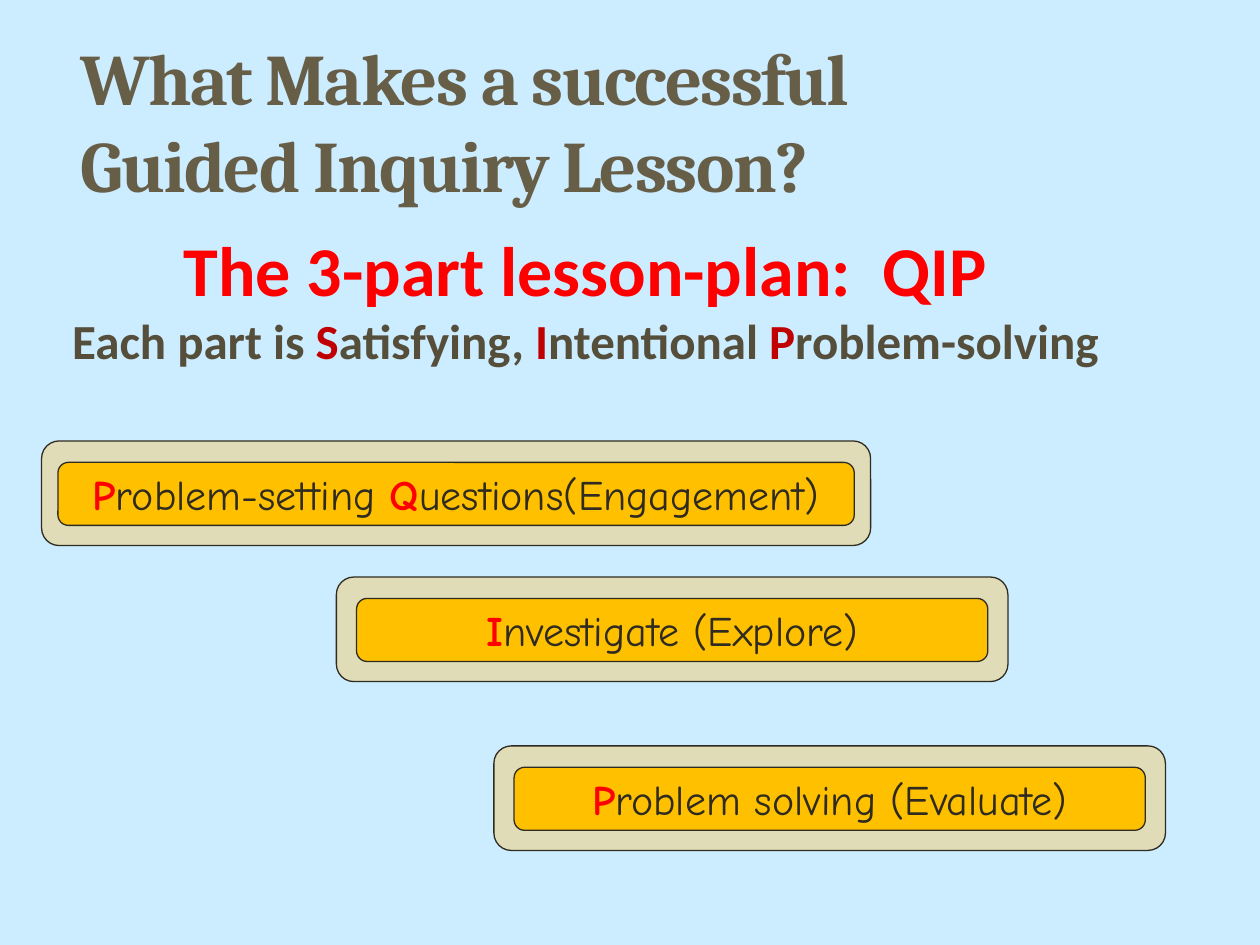
"""Builds the slide on the three-part guided inquiry lesson plan."""
from pptx import Presentation
from pptx import util as u
from pptx.dml.color import RGBColor
from pptx.enum import shapes, text

COLOURS = {
    "sky": "CCECFF", "title": "675E47", "sand": "DFDCB7", "gold": "FFC000",
    "ink": "2F2B20", "red": "FF0000", "crimson": "C00000", "olive": "554E3A",
}


class LessonSlide:
    """Holds the style and the current slide."""

    def __init__(self, deck):
        self.slide = deck.slides.add_slide(deck.slide_layouts[5])
        background = self.slide.background.fill
        background.solid()
        background.fore_color.rgb = self.colour("sky")

    def colour(self, name):
        return RGBColor.from_string(COLOURS[name])

    def style(self, paragraph, font, size, align=text.PP_ALIGN.CENTER, bold=None):
        paragraph.alignment = align
        paragraph.font.name = font
        paragraph.font.size = u.Pt(size)
        paragraph.font.bold = bold

    def add_wording(self, paragraph, wording, plain, accent, bold_all=False):
        """Adds runs, with the parts between asterisks in the accent colour."""
        for index, part in enumerate(wording.split("*")):
            if part:
                run = paragraph.add_run()
                run.text = part
                accented = index % 2 == 1
                run.font.color.rgb = self.colour(accent if accented else plain)
                run.font.bold = bold_all or accented

    def title(self, lines, left, top, width, height):
        heading = self.slide.shapes.title
        heading.left, heading.top = u.Inches(left), u.Inches(top)
        heading.width, heading.height = u.Inches(width), u.Inches(height)
        frame = heading.text_frame
        frame.auto_size = text.MSO_AUTO_SIZE.NONE
        frame.vertical_anchor = text.MSO_ANCHOR.MIDDLE
        paragraph = frame.paragraphs[0]
        self.style(paragraph, "Cambria", 41.4, text.PP_ALIGN.LEFT, True)
        paragraph.font.color.rgb = self.colour("title")
        for index, line in enumerate(lines):
            if index:
                paragraph.add_line_break()
            run = paragraph.add_run()
            run.text = line
            run._r.get_or_add_rPr().set("spc", "-100")

    def summary(self, lines, left, top, width, height):
        box = self.slide.shapes.add_textbox(
            u.Inches(left), u.Inches(top), u.Inches(width), u.Inches(height))
        frame = box.text_frame
        frame.word_wrap = True
        frame.auto_size = text.MSO_AUTO_SIZE.SHAPE_TO_FIT_TEXT
        for index, (wording, size, plain, accent) in enumerate(lines):
            paragraph = frame.add_paragraph() if index else frame.paragraphs[0]
            self.style(paragraph, "Calibri", size, bold=True)
            self.add_wording(paragraph, wording, plain, accent, bold_all=True)

    def panel(self, fill, left, top, width, height):
        panel = self.slide.shapes.add_shape(
            shapes.MSO_SHAPE.FLOWCHART_ALTERNATE_PROCESS,
            u.Inches(left), u.Inches(top), u.Inches(width), u.Inches(height))
        panel.shadow.inherit = False
        panel.fill.solid()
        panel.fill.fore_color.rgb = self.colour(fill)
        panel.line.color.rgb = self.colour("ink")
        panel.line.width = u.Pt(0.75)
        return panel

    def stage(self, wording, left, top, width, margin):
        self.panel("sand", left, top, width, 0.83)
        label = self.panel("gold", left + margin, top + 0.17, width - 2 * margin, 0.5)
        frame = label.text_frame
        frame.word_wrap = False
        frame.vertical_anchor = text.MSO_ANCHOR.MIDDLE
        paragraph = frame.paragraphs[0]
        self.style(paragraph, "Comic Neue", 24)
        self.add_wording(paragraph, wording, "ink", "red")


def main():
    deck = Presentation()
    deck.slide_width, deck.slide_height = u.Inches(10), u.Inches(7.5)
    lesson = LessonSlide(deck)
    lesson.title(["What Makes a successful ", "Guided Inquiry Lesson?"], 0.54, 0.33, 9, 1.25)
    stages = [
        ("*P*roblem-setting *Q*uestions(Engagement)", 0.33, 3.5, 6.58, 0.13),
        ("*I*nvestigate (Explore)", 2.67, 4.58, 5.33, 0.16),
        ("*P*roblem solving (Evaluate)", 3.92, 5.92, 5.33, 0.16),
    ]
    for stage in stages:
        lesson.stage(*stage)
    lesson.summary([
        ("The 3-part lesson-plan:  QIP", 40, "red", "red"),
        ("Each part is *S*atisfying, *I*ntentional *P*roblem-solving", 28, "olive", "crimson"),
    ], 0.04, 1.75, 9.21, 1.25)
    deck.save("out.pptx")


if __name__ == "__main__":
    main()
